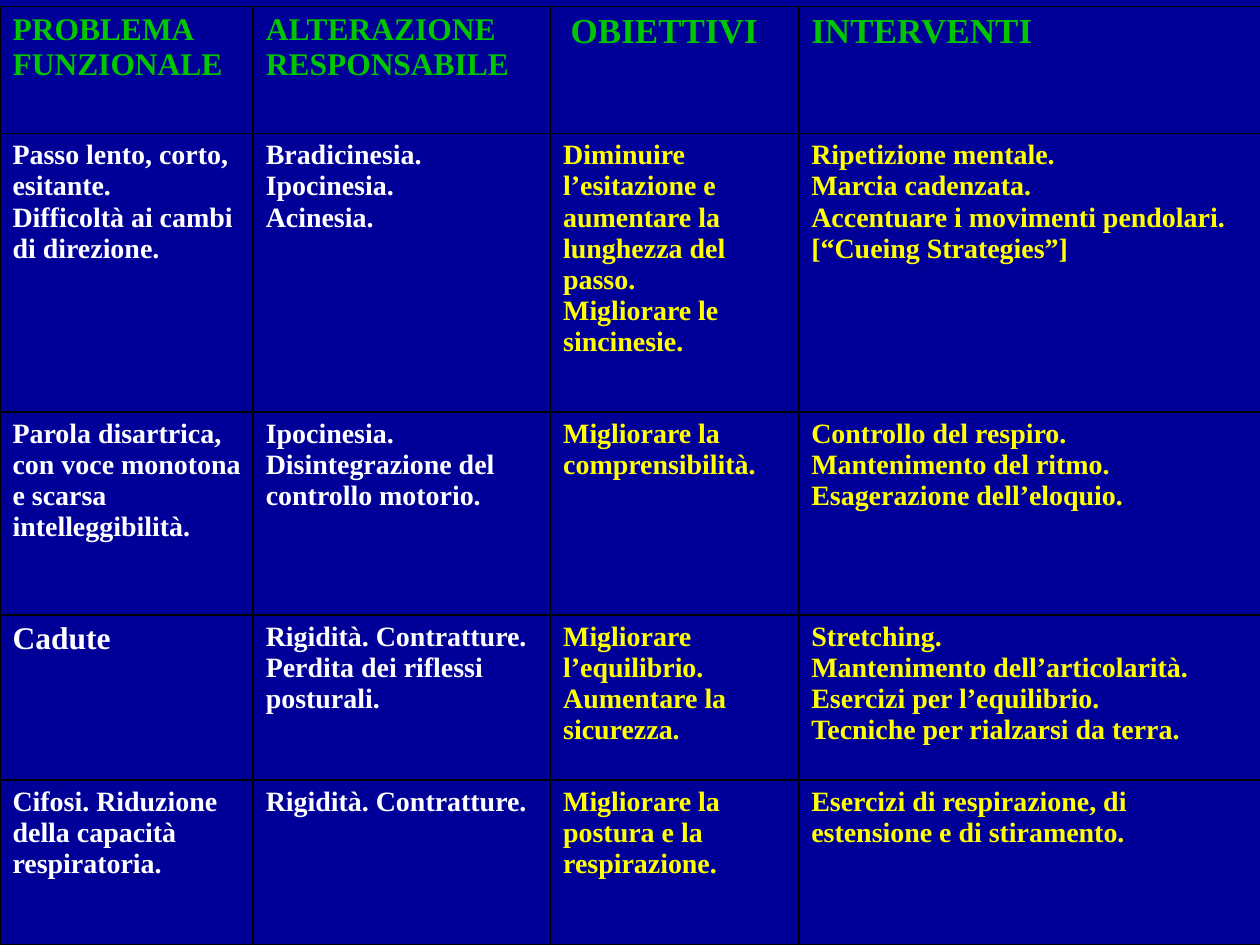
from lxml.etree import SubElement
from pptx import Presentation
from pptx.dml.color import RGBColor
from pptx.oxml.ns import qn
from pptx.util import Inches, Pt

NAVY = RGBColor(0x00, 0x00, 0x99)
GREEN = RGBColor(0x00, 0xC6, 0x00)
WHITE = RGBColor(0xFF, 0xFF, 0xFF)
YELLOW = RGBColor(0xFF, 0xFF, 0x00)
BLACK = RGBColor(0x00, 0x00, 0x00)

COLUMN_WIDTHS = [2.01, 2.36, 1.97, 3.7]
ROW_HEIGHTS = [1.01, 2.21, 1.61, 1.31, 1.31]
COLUMN_COLORS = [WHITE, WHITE, YELLOW, YELLOW]
BODY_SIZE = 16
SPECIAL_SIZES = {(0, 0): 18, (0, 1): 18, (0, 2): 20, (0, 3): 20, (3, 0): 18}

# Each line of a cell is one paragraph
ROWS = [
    ["PROBLEMA FUNZIONALE", "ALTERAZIONE RESPONSABILE", "OBIETTIVI", "INTERVENTI"],
    [
        "Passo lento, corto, esitante.\nDifficoltà ai cambi di direzione.",
        "Bradicinesia.\nIpocinesia.\nAcinesia.",
        "Diminuire l’esitazione e aumentare la lunghezza del passo.\n"
        "Migliorare le sincinesie.",
        "Ripetizione mentale.\nMarcia cadenzata.\n"
        "Accentuare i movimenti pendolari.\n[“Cueing Strategies”]",
    ],
    [
        "Parola disartrica, con voce monotona e scarsa intelleggibilità.",
        "Ipocinesia.\nDisintegrazione del controllo motorio.",
        "Migliorare la comprensibilità.",
        "Controllo del respiro.\nMantenimento del ritmo. Esagerazione dell’eloquio.",
    ],
    [
        "Cadute",
        "Rigidità. Contratture.\nPerdita dei riflessi posturali.",
        "Migliorare l’equilibrio. Aumentare la sicurezza.",
        "Stretching.\nMantenimento dell’articolarità. Esercizi per l’equilibrio.\n"
        "Tecniche per rialzarsi da terra.",
    ],
    [
        "Cifosi. Riduzione della capacità respiratoria.",
        "Rigidità. Contratture.",
        "Migliorare la postura e la respirazione.",
        "Esercizi di respirazione, di estensione e di stiramento.",
    ],
]


def add_borders(cell, color, width):
    properties = cell._tc.get_or_add_tcPr()
    for side in ("a:lnL", "a:lnR", "a:lnT", "a:lnB"):
        line = SubElement(properties, qn(side), w=str(width))
        fill = SubElement(line, qn("a:solidFill"))
        SubElement(fill, qn("a:srgbClr"), val=str(color))


deck = Presentation()
deck.slide_width, deck.slide_height = Inches(10), Inches(7.5)
page = deck.slides.add_slide(deck.slide_layouts[6])
page.background.fill.solid()
page.background.fill.fore_color.rgb = NAVY

frame = page.shapes.add_table(
    len(ROWS), len(COLUMN_WIDTHS),
    Inches(0), Inches(0.05), Inches(sum(COLUMN_WIDTHS)), Inches(sum(ROW_HEIGHTS)),
)
table = frame.table
table.first_row = False
table.horz_banding = False
for column, width in zip(table.columns, COLUMN_WIDTHS):
    column.width = Inches(width)
for row, height in zip(table.rows, ROW_HEIGHTS):
    row.height = Inches(height)

for row_index, texts in enumerate(ROWS):
    for column_index, text in enumerate(texts):
        cell = table.cell(row_index, column_index)
        add_borders(cell, BLACK, Pt(1))
        cell.fill.background()
        cell.text = text
        size = SPECIAL_SIZES.get((row_index, column_index), BODY_SIZE)
        color = GREEN if row_index == 0 else COLUMN_COLORS[column_index]
        for para in cell.text_frame.paragraphs:
            for span in para.runs:
                font_format = {"name": "Times New Roman", "size": Pt(size), "bold": True}
                for attribute, value in font_format.items():
                    setattr(span.font, attribute, value)
                span.font.color.rgb = color

# The objectives heading sits slightly further in than its column
table.cell(0, 2).margin_left = Inches(0.16)

deck.save("out.pptx")
